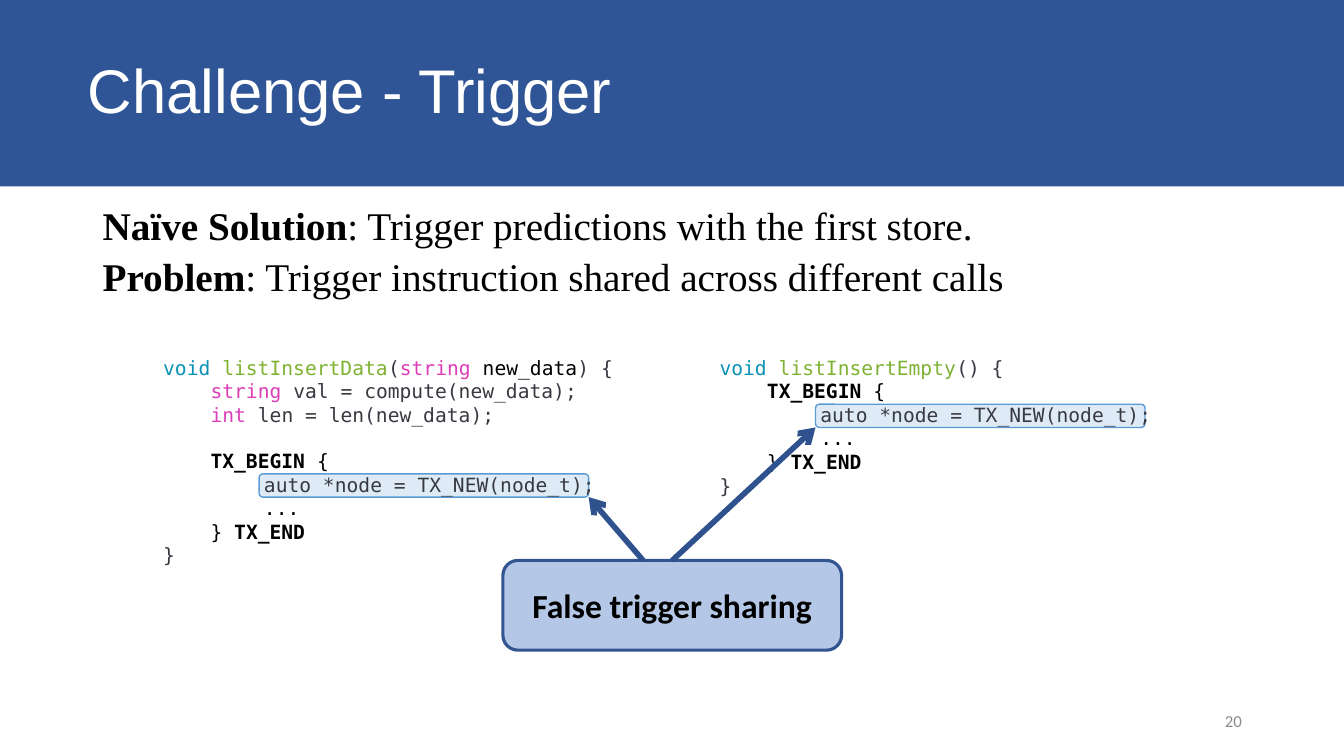
import pptx
import pptx.util
import pptx.dml.color
import pptx.enum.shapes
import pptx.enum.text
import pptx.oxml.ns
from lxml import etree

RGBColor = pptx.dml.color.RGBColor
Pt = pptx.util.Pt
SHAPE = pptx.enum.shapes.MSO_SHAPE
ALIGN = pptx.enum.text.PP_ALIGN
ANCHOR = pptx.enum.text.MSO_ANCHOR
qn = pptx.oxml.ns.qn

BANNER = RGBColor(0x2F, 0x55, 0x97)
WHITE = RGBColor(0xFF, 0xFF, 0xFF)
BLACK = RGBColor(0, 0, 0)
GRAY = RGBColor(0x8C, 0x8C, 0x8C)
TYPE_BLUE = RGBColor(0x09, 0x91, 0xB6)
NAME_GREEN = RGBColor(0x7E, 0xB2, 0x33)
TYPE_PINK = RGBColor(0xDC, 0x3E, 0xB7)
CODE_GRAY = RGBColor(0x38, 0x3A, 0x42)
MARK_FILL = RGBColor(0xDE, 0xEB, 0xF7)
MARK_LINE = RGBColor(0x5B, 0x9B, 0xD5)
BOX_FILL = RGBColor(0xB4, 0xC7, 0xE7)
BOX_LINE = RGBColor(0x32, 0x54, 0x91)
ARROW = RGBColor(0x2F, 0x52, 0x8F)

PLAIN, STRONG = (BLACK, False), (BLACK, True)
VOID, NAME = (TYPE_BLUE, False), (NAME_GREEN, False)
TYPE, CODE = (TYPE_PINK, False), (CODE_GRAY, False)

# Code lines: indent in inches, space before in points, runs
STORE_LINES = [
    (1, 0, [("auto *node = TX_NEW(node_t);", CODE)]),
    (1, 0, [("...", PLAIN)]),
    (0.47, 0, [("} ", PLAIN), ("TX_END", STRONG)]),
    (0, 0, [("}", CODE)]),
]
BEGIN = [("TX_BEGIN", STRONG), (" {", PLAIN)]
INSERT_DATA = [
    (0, 0, [("void ", VOID), ("listInsertData", NAME), ("(", CODE),
            ("string ", TYPE), ("new_data", PLAIN), (") {", CODE)]),
    (0.47, 0, [("string ", TYPE), ("val = compute(new_data);", CODE)]),
    (0.47, 0, [("int ", TYPE), ("len = len(new_data);", CODE)]),
    (0.47, 16.3, BEGIN),
] + STORE_LINES
INSERT_EMPTY = [
    (0, 0, [("void ", VOID), ("listInsertEmpty", NAME), ("() {", CODE)]),
    (0.47, 0, BEGIN),
] + STORE_LINES


class Deck:
    """One slide on a grid of 100 columns by 100 rows."""

    def __init__(self):
        self.prs = pptx.Presentation()
        self.prs.slide_width = pptx.util.Inches(13.33)
        self.prs.slide_height = pptx.util.Inches(7.5)
        self.s = self.prs.slides.add_slide(self.prs.slide_layouts[6])

    def at(self, *lengths):
        sizes = (self.prs.slide_width, self.prs.slide_height) * 2
        return [int(n * size / 100) for n, size in zip(lengths, sizes)]

    def fill_text(self, sp, lines, font, size, frame=None, para=None):
        tf = sp.text_frame
        for key, value in {"word_wrap": True, **(frame or {})}.items():
            setattr(tf, key, value)
        for i, (indent, before, runs) in enumerate(lines):
            p = tf.paragraphs[0] if i == 0 else tf.add_paragraph()
            values = {"alignment": ALIGN.LEFT, "space_before": Pt(before)}
            for key, value in {**values, **(para or {})}.items():
                setattr(p, key, value)
            if indent:
                p._p.get_or_add_pPr().set("marL", str(pptx.util.Inches(indent)))
            for text, (color, bold) in runs:
                r = p.add_run()
                r.text = text
                for key, value in {"name": font, "size": Pt(size), "bold": bold}.items():
                    setattr(r.font, key, value)
                r.font.color.rgb = color

    def text(self, box, lines, font, size, frame=None, para=None):
        sp = self.s.shapes.add_textbox(*self.at(*box))
        self.fill_text(sp, lines, font, size, frame, para)

    def shape(self, kind, box, fill, line=None, width=0):
        sp = self.s.shapes.add_shape(kind, *self.at(*box))
        sp.shadow.inherit = False
        sp.fill.solid()
        sp.fill.fore_color.rgb = fill
        if line is None:
            sp.line.fill.background()
        else:
            sp.line.color.rgb = line
            sp.line.width = Pt(width)
        return sp

    def arrow(self, start, end, source=None):
        c = self.s.shapes.add_connector(
            pptx.enum.shapes.MSO_CONNECTOR.STRAIGHT, *self.at(*start, *end))
        if source is not None:
            c.begin_connect(source, 0)
        c.line.color.rgb = ARROW
        c.line.width = Pt(4)
        ln = c._element.spPr.find(qn("a:ln"))
        etree.SubElement(ln, qn("a:tailEnd"), type="arrow")
        etree.SubElement(c._element.spPr, qn("a:effectLst"))

    def code(self, left, top, height, lines, store_row):
        """Place a listing over its marked store; return the mark's box."""
        row = 3.07
        mark = (left + 7.88, top + 0.93 + store_row * row, 24.52, row)
        self.shape(SHAPE.ROUNDED_RECTANGLE, mark, MARK_FILL, MARK_LINE, 1)
        self.text((left, top, 35.55, height), lines, "DejaVu Sans Mono", 14)
        return mark


def main():
    deck = Deck()

    # Title banner
    banner = deck.shape(SHAPE.RECTANGLE, (0, 0, 100, 24.67), BANNER)
    deck.fill_text(banner, [(0, 0, [("Challenge - Trigger", (WHITE, False))])], "Arial", 44,
                   {"vertical_anchor": ANCHOR.MIDDLE, "margin_left": pptx.util.Inches(0.87)},
                   {"line_spacing": 0.9, "space_after": Pt(12)})

    # Solution and problem
    points = [("Naïve Solution", ": Trigger predictions with the first store."),
              ("Problem", ": Trigger instruction shared across different calls")]
    deck.text((6.9, 26.67, 86.25, 63.47),
              [(0, 6, [(head, STRONG), (rest, PLAIN)]) for head, rest in points],
              "Times New Roman", 28, para={"line_spacing": 0.9})

    # Slide number
    deck.text((70.65, 92.67, 22.5, 5.33), [(0, 0, [("20", (GRAY, False))])], "Calibri", 12,
              {"vertical_anchor": ANCHOR.MIDDLE}, {"alignment": ALIGN.RIGHT})

    # Code listings with the shared store marked
    data = deck.code(11.4, 46.4, 29.6, INSERT_DATA, 5)
    empty = deck.code(52.8, 46.4, 20.13, INSERT_EMPTY, 2)

    # Callout and its arrows to the marks
    box = deck.shape(SHAPE.ROUNDED_RECTANGLE, (37.42, 74.13, 25.2, 11.87),
                     BOX_FILL, BOX_LINE, 2.25)
    deck.fill_text(box, [(0, 0, [("False trigger sharing", STRONG)])], "Calibri", 24,
                   {"vertical_anchor": ANCHOR.MIDDLE}, {"alignment": ALIGN.CENTER})
    deck.arrow((47.85, 74.13), (data[0] + data[2], data[1] + data[3]))
    deck.arrow((50.02, 74.13), (empty[0], empty[1] + empty[3]), box)

    deck.prs.save("out.pptx")


if __name__ == "__main__":
    main()
